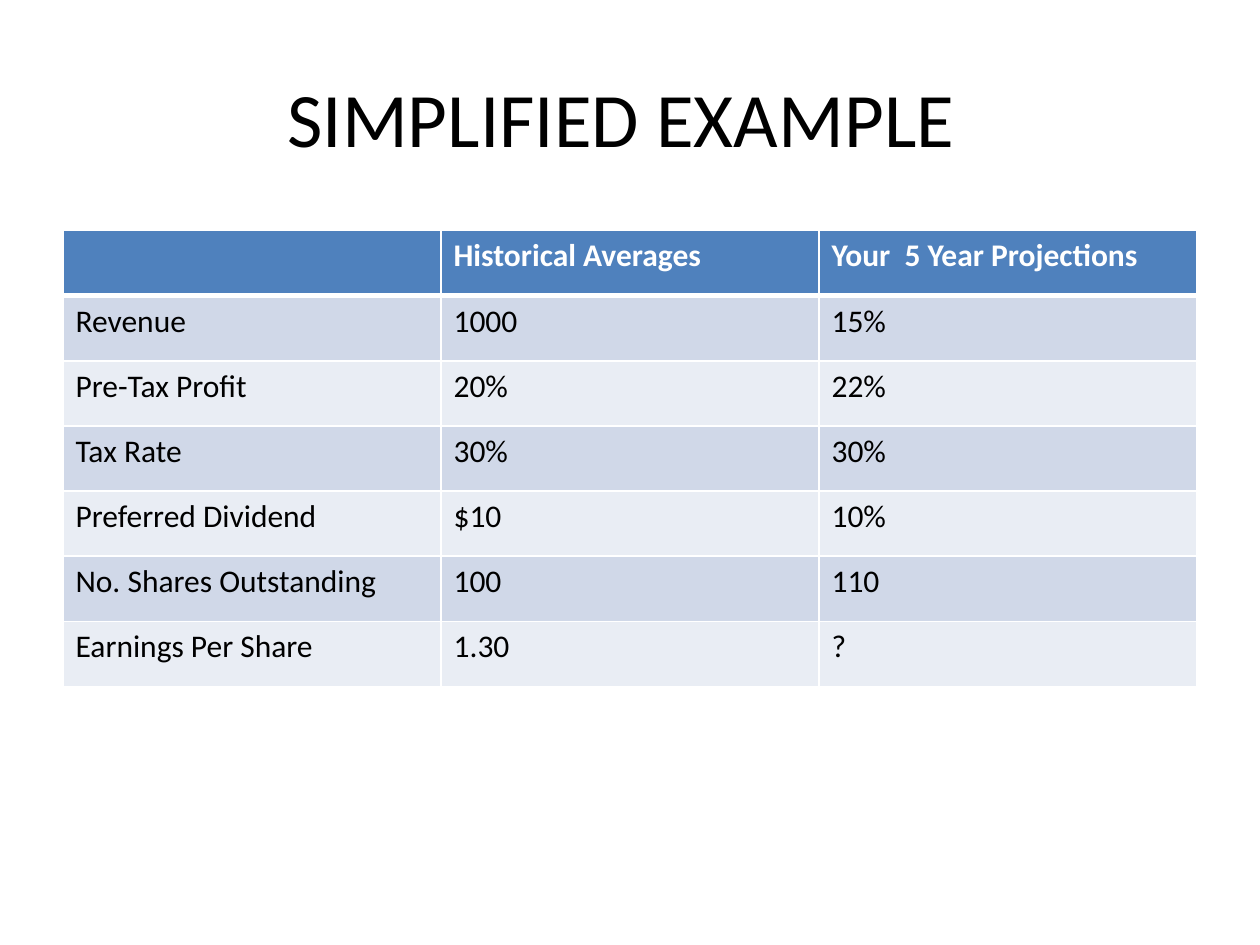
from lxml import etree
from pptx import Presentation
from pptx import util as u
from pptx.dml.color import RGBColor
from pptx.enum import text
from pptx.oxml.ns import qn

TITLE = "SIMPLIFIED EXAMPLE "
HEADER = ("", "Historical Averages", "Your  5 Year Projections")
FIGURES = [
    ("Revenue", "1000", "15%"),
    ("Pre-Tax Profit", "20%", "22%"),
    ("Tax Rate", "30%", "30%"),
    ("Preferred Dividend", "$10", "10%"),
    ("No. Shares Outstanding", "100", "110"),
    ("Earnings Per Share", "1.30", "?"),
]
COLORS = {"header": "4F81BD", "odd": "D0D8E8", "even": "E9EDF4",
          "light": "FFFFFF", "dark": "000000"}
FONT = "Calibri"
WIDTH, HEIGHT = u.Inches(10), u.Inches(7.5)
MARGIN = int(WIDTH * 0.05)
CONTENT_WIDTH = WIDTH - 2 * MARGIN
TITLE_TOP, TITLE_HEIGHT = int(HEIGHT * 0.04), u.Inches(1.25)
TABLE_TOP, TABLE_HEIGHT = u.Inches(1.83), u.Inches(3.62)


def add_run(paragraph, words, size, color, bold=False):
    run = paragraph.add_run()
    run.text = words
    run.font.name = FONT
    run.font.size = u.Pt(size)
    run.font.bold = bold
    run.font.color.rgb = RGBColor.from_string(COLORS[color])


def set_borders(cell, widths):
    """Draw light cell borders; widths maps a side (L, R, T, B) to points."""
    properties = cell._tc.get_or_add_tcPr()
    for side, points in widths.items():
        line = etree.SubElement(properties, qn(f"a:ln{side}"), w=str(u.Pt(points)))
        fill = etree.SubElement(line, qn("a:solidFill"))
        etree.SubElement(fill, qn("a:srgbClr"), val=COLORS["light"])


def add_title(slide):
    frame = slide.shapes.add_textbox(
        MARGIN, TITLE_TOP, CONTENT_WIDTH, TITLE_HEIGHT).text_frame
    frame.word_wrap = True
    frame.vertical_anchor = text.MSO_ANCHOR.MIDDLE
    heading = frame.paragraphs[0]
    heading.alignment = text.PP_ALIGN.CENTER
    add_run(heading, TITLE, 44, "dark")


def add_figures(slide):
    rows = [HEADER, *FIGURES]
    table = slide.shapes.add_table(
        len(rows), len(HEADER), MARGIN, TABLE_TOP, CONTENT_WIDTH, TABLE_HEIGHT).table
    for r, row in enumerate(rows):
        is_header = r == 0
        band = "header" if is_header else ("even", "odd")[r % 2]
        borders = {"L": 1, "R": 1, "T": 3 if r == 1 else 1, "B": 3 if is_header else 1}
        for c, words in enumerate(row):
            cell = table.cell(r, c)
            set_borders(cell, borders)
            cell.fill.solid()
            cell.fill.fore_color.rgb = RGBColor.from_string(COLORS[band])
            if words:
                add_run(cell.text_frame.paragraphs[0], words, 18,
                        "light" if is_header else "dark", is_header)


def main():
    deck = Presentation()
    deck.slide_width, deck.slide_height = WIDTH, HEIGHT
    slide = deck.slides.add_slide(deck.slide_layouts[6])
    add_title(slide)
    add_figures(slide)
    deck.save("out.pptx")


if __name__ == "__main__":
    main()
